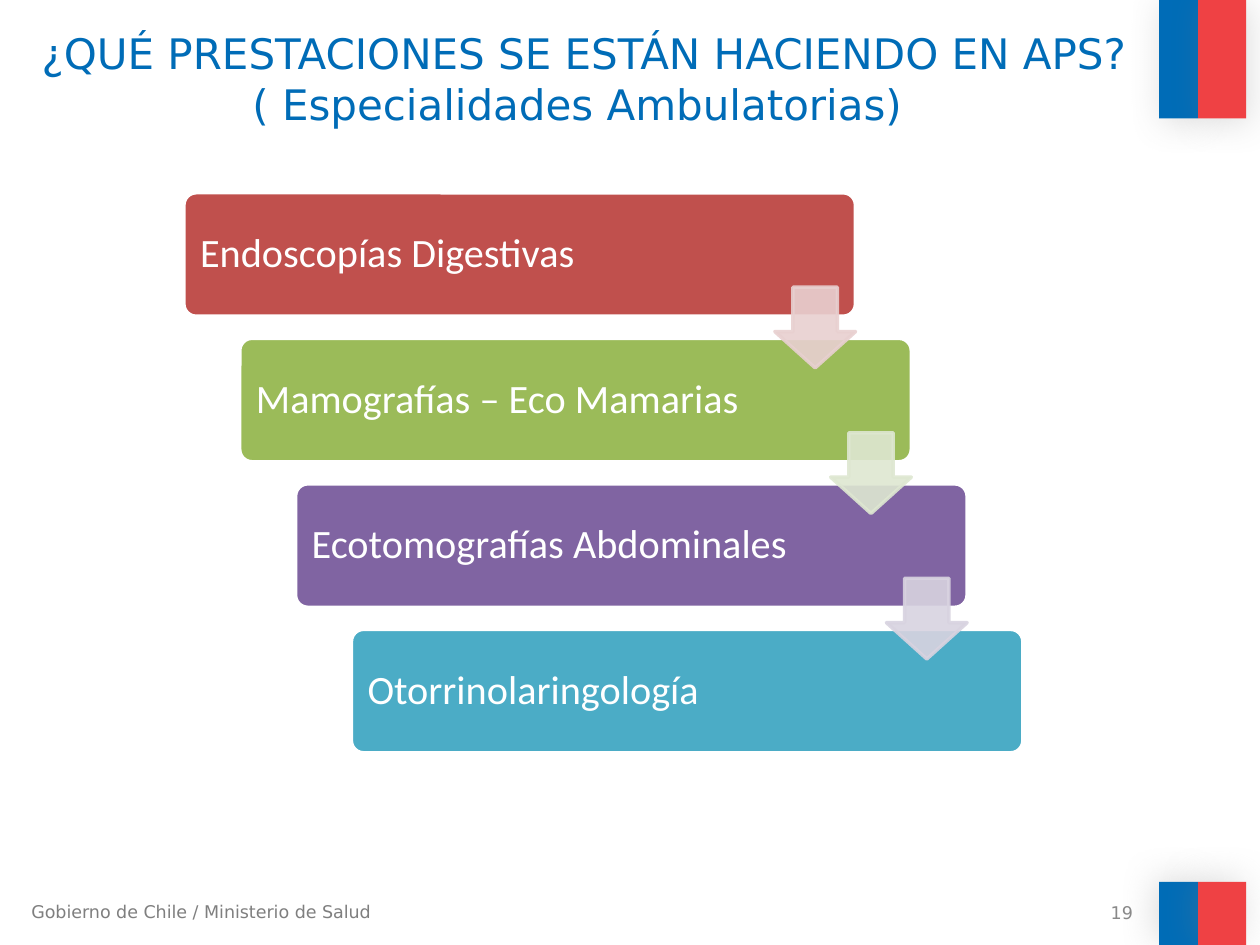
from lxml import etree
from pptx import Presentation
from pptx.dml.color import RGBColor
from pptx.enum.shapes import MSO_SHAPE
from pptx.enum.text import MSO_ANCHOR, PP_ALIGN
from pptx.oxml.ns import qn
from pptx.util import Inches, Pt

RECT, CARD, ARROW = MSO_SHAPE.RECTANGLE, MSO_SHAPE.ROUNDED_RECTANGLE, MSO_SHAPE.DOWN_ARROW
LEFT, CENTER, RIGHT = PP_ALIGN.LEFT, PP_ALIGN.CENTER, PP_ALIGN.RIGHT
TOP, MIDDLE = MSO_ANCHOR.TOP, MSO_ANCHOR.MIDDLE

COLORS = {
    "blue": "006CB7", "flag_red": "EF4144", "white": "FFFFFF", "shadow": "808080",
    "footer": "7F7F7F", "number": "898989",
    "red": "C0504D", "green": "9BBB59", "purple": "8064A2", "aqua": "4BACC6",
    "pale_red": "E8D0D0", "pale_green": "DEE7D1", "pale_purple": "D8D3E0",
}
FORMATS = {
    "title": {"name": "DejaVu Sans", "size": Pt(24)},
    "small": {"name": "DejaVu Sans", "size": Pt(10)},
    "card": {"name": "Calibri", "size": Pt(23)},
}


class SlideBuilder:
    def __init__(self, slide):
        self.slide = slide

    def rgb(self, color):
        return RGBColor.from_string(COLORS[color])

    def shape(self, kind, box, fill, line=None, adjustments=(), alpha=None):
        s = self.slide.shapes.add_shape(kind, *map(Inches, box))
        s.shadow.inherit = False
        for i, value in enumerate(adjustments):
            s.adjustments[i] = value
        s.fill.solid()
        s.fill.fore_color.rgb = self.rgb(fill)
        if line:
            s.line.color.rgb = self.rgb(line)
            s.line.width = Pt(2)
        else:
            s.line.fill.background()
        if alpha:
            for clr in s._element.spPr.iter(qn("a:srgbClr")):
                etree.SubElement(clr, qn("a:alpha"), val=str(alpha * 1000))
        return s

    def flag_band(self, box, fill, direction):
        s = self.shape(RECT, box, fill)
        effects = s._element.spPr.find(qn("a:effectLst"))
        shadow = etree.SubElement(effects, qn("a:outerShdw"), blurRad=str(Pt(20)),
                                  dist=str(Pt(3)), dir=str(direction * 60000))
        clr = etree.SubElement(shadow, qn("a:srgbClr"), val=COLORS["shadow"])
        etree.SubElement(clr, qn("a:alpha"), val="25000")

    def text(self, box, text, style, color, align=LEFT, anchor=TOP, inset=None, spacing=None):
        tf = self.slide.shapes.add_textbox(*map(Inches, box)).text_frame
        tf.word_wrap = True
        tf.vertical_anchor = anchor
        if inset is not None:
            for side in ("left", "top", "right", "bottom"):
                setattr(tf, f"margin_{side}", Inches(inset))
        p = tf.paragraphs[0]
        p.alignment = align
        p.line_spacing = spacing
        r = p.add_run()
        r.text = text
        for name, value in FORMATS[style].items():
            setattr(r.font, name, value)
        r.font.color.rgb = self.rgb(color)


def main():
    prs = Presentation()
    prs.slide_width, prs.slide_height = Inches(10), Inches(7.5)
    b = SlideBuilder(prs.slides.add_slide(prs.slide_layouts[6]))

    # Flag bands, top and bottom right
    for top, height, direction in ((0, 0.94, 45), (7, 0.5, 215)):
        b.flag_band((9.2, top, 0.31, height), "blue", direction)
        b.flag_band((9.51, top, 0.38, height), "flag_red", direction)

    # Footer, title and page number
    b.text((0.15, 7.1, 3.02, 0.27), "Gobierno de Chile / Ministerio de Salud", "small", "footer")
    b.text((0.17, 0.17, 8.93, 1.25),
           "¿QUÉ PRESTACIONES SE ESTÁN HACIENDO EN APS? ( Especialidades Ambulatorias) ",
           "title", "blue", CENTER)
    b.text((6.76, 7.14, 2.33, 0.21), "19", "small", "number", RIGHT, MIDDLE)

    # Staircase of services
    left, top, step_x, step_y = 1.46, 1.53, 0.443, 1.155
    services = (
        ("Endoscopías Digestivas", "red"),
        ("Mamografías – Eco Mamarias", "green"),
        ("Ecotomografías Abdominales", "purple"),
        ("Otorrinolaringología", "aqua"),
    )
    for i, (service, color) in enumerate(services):
        x, y = left + i * step_x, top + i * step_y
        b.shape(CARD, (x, y, 5.33, 0.98), color, "white", [0.1])
        b.text((x + 0.03, y + 0.03, 4.2, 0.92), service, "card", "white",
               anchor=MIDDLE, inset=0.1, spacing=0.9)

    # Arrows from each step to the next
    for i, color in enumerate(("pale_red", "pale_green", "pale_purple")):
        x, y = left + 4.69 + i * step_x, top + 0.75 + i * step_y
        # The second adjustment is head length, the first is shaft width
        b.shape(ARROW, (x, y, 0.64, 0.64), color, color, [0.55, 0.45], alpha=90)

    prs.save("out.pptx")


if __name__ == "__main__":
    main()
